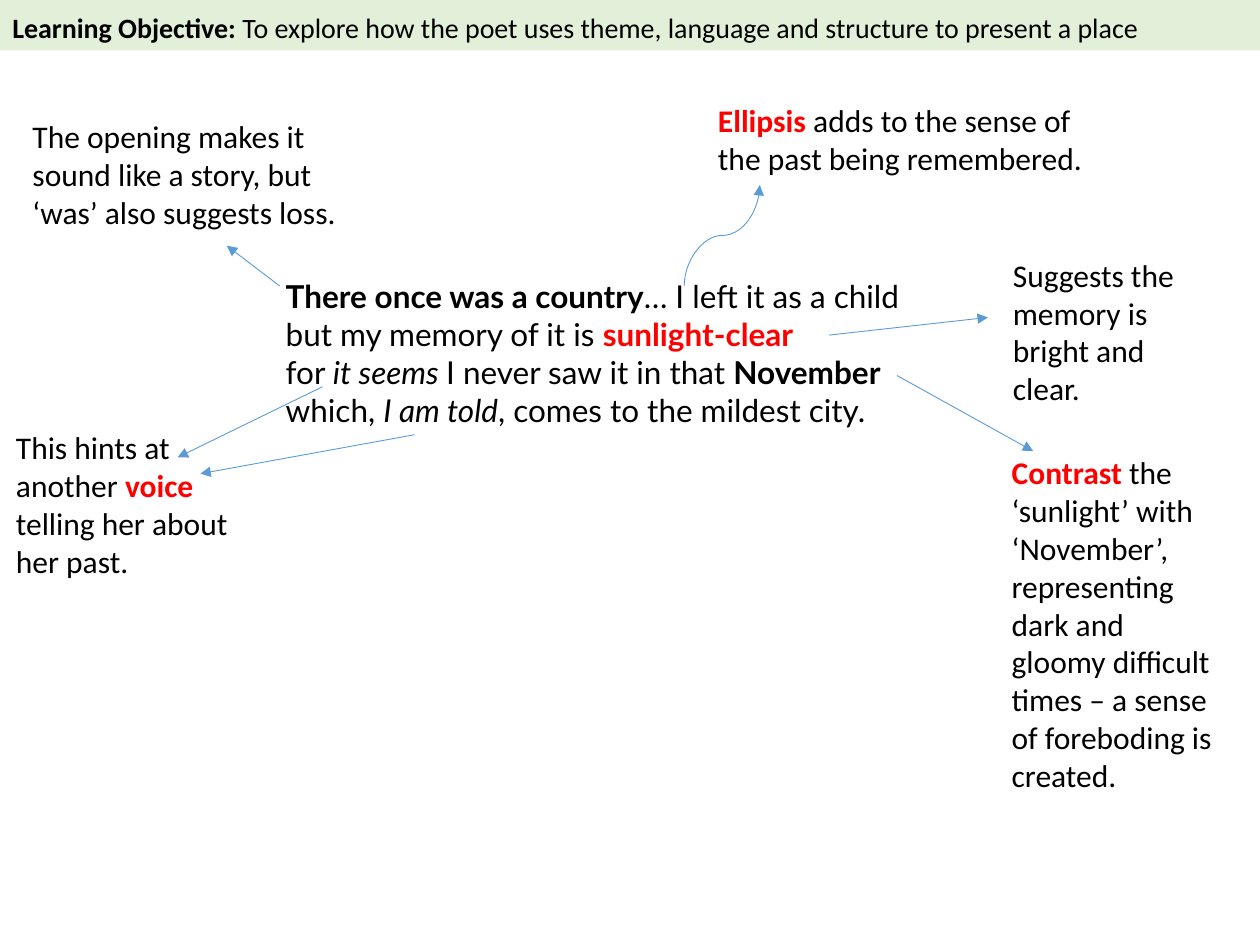
import pptx
import pptx.dml.color
import pptx.enum.shapes
import pptx.enum.text
import pptx.oxml.ns
import pptx.util
from lxml import etree

Pt = pptx.util.Pt
BLACK = pptx.dml.color.RGBColor(0x00, 0x00, 0x00)
RED = pptx.dml.color.RGBColor(0xFF, 0x00, 0x00)
BLUE = pptx.dml.color.RGBColor(0x5B, 0x9B, 0xD5)
PALE_GREEN = pptx.dml.color.RGBColor(0xE2, 0xF0, 0xD9)

PLAIN, BOLD, ITALIC, KEYWORD = "plain", "bold", "italic", "keyword"

POEM_LINES = [
    [("There once was a country", BOLD), ("… I left it as a child", PLAIN)],
    [("but my memory of it is ", PLAIN), ("sunlight-clear", KEYWORD)],
    [("for ", PLAIN), ("it seems ", ITALIC), ("I never saw it in that ", PLAIN),
     ("November", BOLD)],
    [("which, ", PLAIN), ("I am told", ITALIC),
     (", comes to the mildest city.", PLAIN)],
]

ANNOTATIONS = [
    ((11.5, 63.4, 188, 94.3),
     [("The opening makes it sound like a story, but ‘was’ also suggests loss.", PLAIN)]),
    ((571.7, 142.6, 121.7, 94.3),
     [("Suggests the memory is bright and clear.", PLAIN)]),
    ((571, 255.6, 128.9, 203.8),
     [("Contrast", KEYWORD),
      (" the ‘sunlight’ with ‘November’, representing dark and gloomy difficult "
       "times – a sense of foreboding is created.", PLAIN)]),
    ((2, 241.2, 147.6, 94.3),
     [("This hints at another ", PLAIN), ("voice", KEYWORD),
      (" telling her about her past.", PLAIN)]),
    ((403.2, 54, 242.6, 51.1),
     [("Ellipsis ", KEYWORD),
      ("adds to the sense of the past being remembered.", PLAIN)]),
]

STRAIGHT_ARROWS = [
    ((159.8, 163.4), (129.6, 140.4)),
    ((473.8, 191.5), (564.5, 181.4)),
    ((512.6, 214.6), (590.4, 257.8)),
    ((184.3, 221), (101.5, 261.4)),
    ((236.9, 248.4), (114.5, 270.7)),
]


def write_lines(text_frame, lines, font_name, size):
    text_frame.word_wrap = True
    paragraph = text_frame.paragraphs[0]
    paragraph.alignment = pptx.enum.text.PP_ALIGN.LEFT
    for index, pieces in enumerate(lines):
        if index:
            paragraph.add_line_break()
        for text, style in pieces:
            run = paragraph.add_run()
            run.text = text
            run.font.name = font_name
            run.font.size = Pt(size)
            run.font.bold = style in (BOLD, KEYWORD)
            run.font.italic = style == ITALIC
            run.font.color.rgb = RED if style == KEYWORD else BLACK


def add_text(slide, box, lines, font_name="Calibri"):
    shape = slide.shapes.add_textbox(*map(Pt, box))
    write_lines(shape.text_frame, lines, font_name, 18)


def add_banner(slide):
    shape = slide.shapes.add_shape(
        pptx.enum.shapes.MSO_SHAPE.RECTANGLE, 0, 0, Pt(720), Pt(28.8))
    shape.shadow.inherit = False
    shape.fill.solid()
    shape.fill.fore_color.rgb = PALE_GREEN
    shape.line.fill.background()
    text_frame = shape.text_frame
    text_frame.vertical_anchor = pptx.enum.text.MSO_ANCHOR.TOP
    text_frame.margin_top = Pt(6)
    write_lines(text_frame, [[
        ("Learning Objective: ", BOLD),
        ("To explore how the poet uses theme, language and structure to present a place",
         PLAIN)]], "Calibri", 16)


def add_arrow(slide, start, end, kind=pptx.enum.shapes.MSO_CONNECTOR.STRAIGHT):
    connector = slide.shapes.add_connector(kind, *map(Pt, start + end))
    connector.line.color.rgb = BLUE
    connector.line.width = Pt(0.5)
    qualified = pptx.oxml.ns.qn
    line = connector.line._get_or_add_ln()
    etree.SubElement(line, qualified("a:tailEnd"), type="triangle")
    etree.SubElement(connector._element.spPr, qualified("a:effectLst"))
    return connector


def add_upright_curve(slide, start, end):
    center_x, center_y = (start[0] + end[0]) / 2, (start[1] + end[1]) / 2
    offset_x, offset_y = start[0] - center_x, start[1] - center_y
    connector = add_arrow(
        slide,
        (center_x + offset_y, center_y - offset_x),
        (center_x - offset_y, center_y + offset_x),
        pptx.enum.shapes.MSO_CONNECTOR.CURVE)
    transform = connector._element.spPr.find(pptx.oxml.ns.qn("a:xfrm"))
    transform.set("rot", str(90 * 60000))


def main():
    presentation = pptx.Presentation()
    presentation.slide_width = Pt(720)
    presentation.slide_height = Pt(540)
    slide = presentation.slides.add_slide(presentation.slide_layouts[6])
    add_text(slide, (156.2, 154.8, 427.7, 116.6), POEM_LINES, "Lato")
    for box, pieces in ANNOTATIONS:
        add_text(slide, box, [pieces])
    for start, end in STRAIGHT_ARROWS:
        add_arrow(slide, start, end)
    add_upright_curve(slide, (391, 163.4), (434.2, 105.8))
    add_banner(slide)
    presentation.save("out.pptx")


if __name__ == "__main__":
    main()
